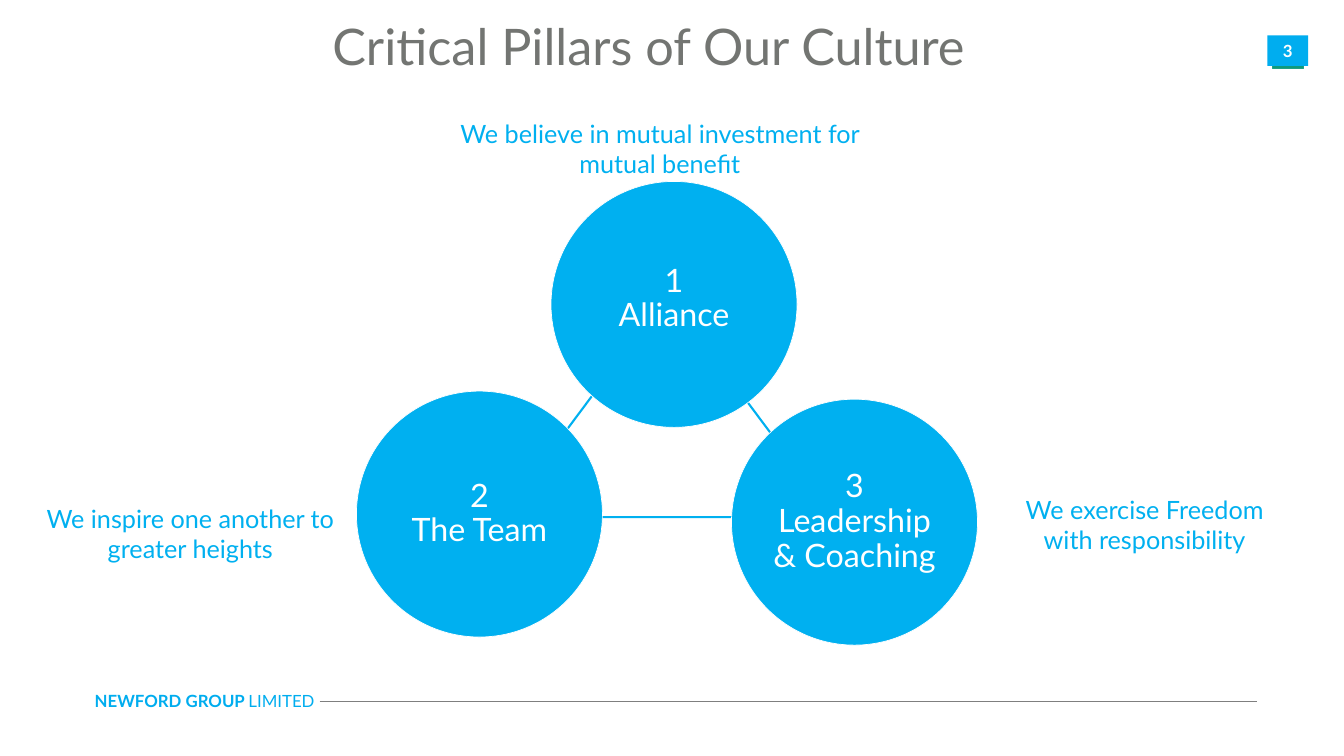
from pptx import Presentation
from pptx.dml.color import RGBColor
from pptx.enum.shapes import MSO_CONNECTOR, MSO_SHAPE as SHAPE
from pptx.enum.text import MSO_ANCHOR as ANCHOR, MSO_AUTO_SIZE, PP_ALIGN as ALIGN
from pptx.oxml import parse_xml
from pptx.oxml.ns import nsdecls
from pptx.util import Inches, Pt

COLORS = {"sky": "00B0F0", "badge": "00ADEF", "white": "FFFFFF", "title": "737572",
          "rule": "7F7F7F", "green_edge": "1EA185", "green_top": "4BAC93",
          "green_bottom": "0D997B"}
TITLE = "Critical Pillars of Our Culture"
PAGE = "3"
COMPANY = [("NEWFORD GROUP ", True), ("LIMITED", False)]
DIAMETER = 4.88
# left, top, bottom inset, paragraphs
PILLARS = [
    (7.07, 7.76, 0.03, ["2", "The Team"]),
    (14.51, 7.92, 0.03, ["3 Leadership & Coaching"]),
    (10.93, 3.6, 0.24, ["1", "Alliance"]),
]
# left, top, width, height, text
CAPTIONS = [
    (8.4, 2.24, 9.38, 0.98, "We believe in mutual investment for mutual benefit"),
    (19.75, 9.71, 5.91, 0.98, "We exercise Freedom with responsibility"),
    (0.82, 9.88, 5.91, 1.61, "We inspire one another to greater heights"),
]


def rgb(name):
    return RGBColor.from_string(COLORS[name])


def box(*lengths):
    return [Inches(v) for v in lengths]


def add_shape(slide, kind, at, fill=None, line=None, width=1):
    sp = slide.shapes.add_shape(kind, *box(*at))
    sp.shadow.inherit = False
    if fill:
        sp.fill.solid()
        sp.fill.fore_color.rgb = rgb(fill)
    else:
        sp.fill.background()
    if line:
        sp.line.color.rgb = rgb(line)
        sp.line.width = Pt(width)
    else:
        sp.line.fill.background()
    return sp


def write(sp, paragraphs, size, color, insets=(0.1, 0.05, 0.1, 0.05),
          anchor=ANCHOR.TOP, align=ALIGN.CENTER, spacing=1.0):
    """Fill a shape with paragraphs, each a list of (text, bold) runs."""
    tf = sp.text_frame
    sides = ("margin_left", "margin_top", "margin_right", "margin_bottom")
    frame = dict(zip(sides, box(*insets)), word_wrap=True,
                 auto_size=MSO_AUTO_SIZE.NONE, vertical_anchor=anchor)
    for name, value in frame.items():
        setattr(tf, name, value)
    for i, runs in enumerate(paragraphs):
        p = tf.add_paragraph() if i else tf.paragraphs[0]
        p.alignment, p.line_spacing = align, spacing
        for text, bold in runs:
            r = p.add_run()
            r.text = text
            for name, value in dict(name="Lato", size=Pt(size), bold=bold).items():
                setattr(r.font, name, value)
            r.font.color.rgb = rgb(color)


def add_frame(slide):
    """Page badge, company name and footer rule."""
    edge = add_shape(slide, SHAPE.RECTANGLE, (25.24, 0.73, 0.62, 0.62),
                     line="green_edge", width=0.75)
    edge.fill.gradient()
    edge.fill.gradient_angle = 270
    for stop, name in zip(edge.fill.gradient_stops, ("green_top", "green_bottom")):
        stop.color.rgb = rgb(name)
    badge = add_shape(slide, SHAPE.RECTANGLE, (25.14, 0.7, 0.81, 0.61), "badge")
    write(badge, [[(PAGE, True)]], 24, "white", (0.2, 0.1, 0.2, 0.1))

    company = slide.shapes.add_textbox(*box(1.78, 13.65, 4.93, 0.5))
    write(company, [COMPANY], 24, "badge", align=ALIGN.LEFT)
    rule = slide.shapes.add_connector(MSO_CONNECTOR.STRAIGHT,
                                      *box(6.34, 13.92, 24.94, 13.92))
    rule.line.color.rgb = rgb("rule")
    rule.line.width = Pt(1)
    rule._element.spPr.append(parse_xml(f"<a:effectLst {nsdecls('a')}/>"))


def add_pillars(slide):
    add_shape(slide, SHAPE.ISOSCELES_TRIANGLE, (9.95, 5.85, 6.58, 4.41),
              line="sky", width=3)
    for left, top, bottom, lines in PILLARS:
        circle = add_shape(slide, SHAPE.OVAL, (left, top, DIAMETER, DIAMETER),
                           "sky", "white")
        write(circle, [[(line, False)] for line in lines], 46, "white",
              (0.03, 0.03, 0.03, bottom), ANCHOR.MIDDLE, spacing=0.9)
    for *at, text in CAPTIONS:
        caption = slide.shapes.add_textbox(*box(*at))
        write(caption, [[(text, False)]], 36, "sky", (0.1,) * 4)


def main():
    prs = Presentation()
    prs.slide_width, prs.slide_height = box(26.66, 15)
    s = prs.slides.add_slide(prs.slide_layouts[5])
    title = s.shapes.title
    title.left, title.top, title.width, title.height = box(1.94, 0.25, 21.85, 1.61)
    write(title, [[(TITLE, False)]], 72, "title")
    add_frame(s)
    add_pillars(s)
    prs.save("out.pptx")


if __name__ == "__main__":
    main()
